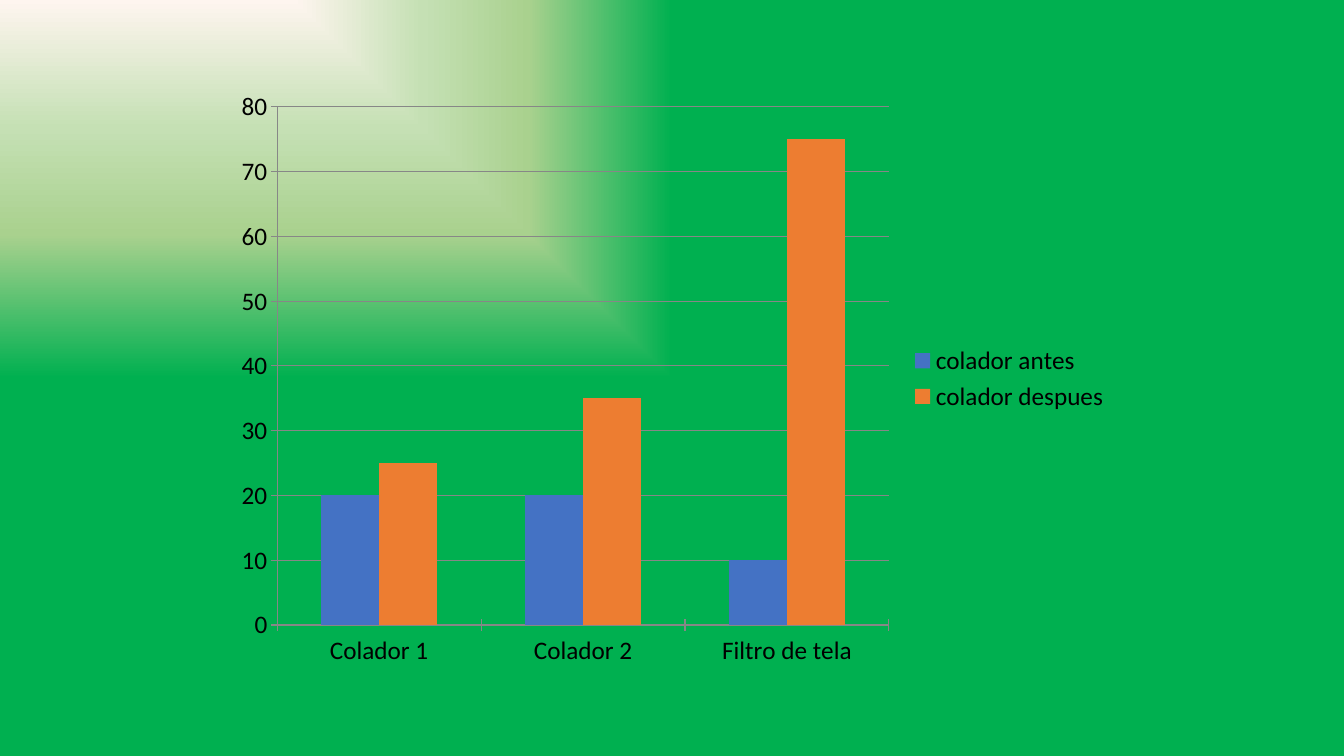
from lxml.etree import SubElement
from pptx import Presentation
from pptx.chart.data import CategoryChartData
from pptx.dml.color import RGBColor
from pptx.enum.chart import XL_CHART_TYPE, XL_LEGEND_POSITION, XL_TICK_MARK
from pptx.oxml.ns import qn
from pptx.util import Cm, Pt

COLORS = {
    "cream": "FEF5EF",
    "pale": "C5E0B4",
    "leaf": "A9D18E",
    "green": "00B050",
    "blue": "4472C4",
    "orange": "ED7D31",
    "grid": "878787",
    "text": "000000",
}


class SlideBuilder:
    font_name = "Calibri"
    font_size = Pt(18)

    def __init__(self, page):
        self.page = page

    def color(self, name):
        return RGBColor.from_string(COLORS[name])

    def corner_gradient(self, stops):
        fill = self.page.background.fill
        fill.gradient()
        gradient = self.page._element.find(".//" + qn("a:gradFill"))
        for child in list(gradient):
            gradient.remove(child)
        stop_list = SubElement(gradient, qn("a:gsLst"))
        for percent, name in stops:
            stop = SubElement(stop_list, qn("a:gs"), pos=str(percent * 1000))
            SubElement(stop, qn("a:srgbClr"), val=COLORS[name])
        shade = SubElement(gradient, qn("a:path"), {"path": "rect"})
        SubElement(shade, qn("a:fillToRect"), r="100000", b="100000")

    def style_line(self, line):
        line.color.rgb = self.color("grid")
        line.width = Pt(0.75)

    def column_chart(self, left, top, width, height, categories, series):
        data = CategoryChartData()
        data.categories = categories
        for name, values, _ in series:
            data.add_series(name, values)
        chart = self.page.shapes.add_chart(
            XL_CHART_TYPE.COLUMN_CLUSTERED,
            Cm(left), Cm(top), Cm(width), Cm(height), data,
        ).chart
        chart.font.name = self.font_name
        chart.font.size = self.font_size
        chart.font.color.rgb = self.color("text")
        chart.has_title = False
        chart.has_legend = True
        chart.legend.position = XL_LEGEND_POSITION.RIGHT
        chart.legend.include_in_layout = False

        plot = chart.plots[0]
        plot.vary_by_categories = False
        plot.gap_width = 150
        plot.overlap = 0
        for column, (_, _, name) in zip(plot.series, series):
            column.format.fill.solid()
            column.format.fill.fore_color.rgb = self.color(name)

        for axis in (chart.category_axis, chart.value_axis):
            axis.major_tick_mark = XL_TICK_MARK.CROSS
            axis.minor_tick_mark = XL_TICK_MARK.NONE
            self.style_line(axis.format.line)
        chart.value_axis.minimum_scale = 0
        chart.value_axis.maximum_scale = 80
        chart.value_axis.major_unit = 10
        chart.value_axis.has_major_gridlines = True
        self.style_line(chart.value_axis.major_gridlines.format.line)


def main():
    deck = Presentation()
    deck.slide_width = Cm(33.87)
    deck.slide_height = Cm(19.05)
    builder = SlideBuilder(deck.slides.add_slide(deck.slide_layouts[6]))
    builder.corner_gradient(
        [(0, "cream"), (34, "pale"), (62, "leaf"), (100, "green")]
    )
    builder.column_chart(
        5.64, 2.01, 22.58, 15.06,
        ["Colador 1", "Colador 2", "Filtro de tela"],
        [
            ("colador antes", (20, 20, 10), "blue"),
            ("colador despues", (25, 35, 75), "orange"),
        ],
    )
    deck.save("out.pptx")


if __name__ == "__main__":
    main()
